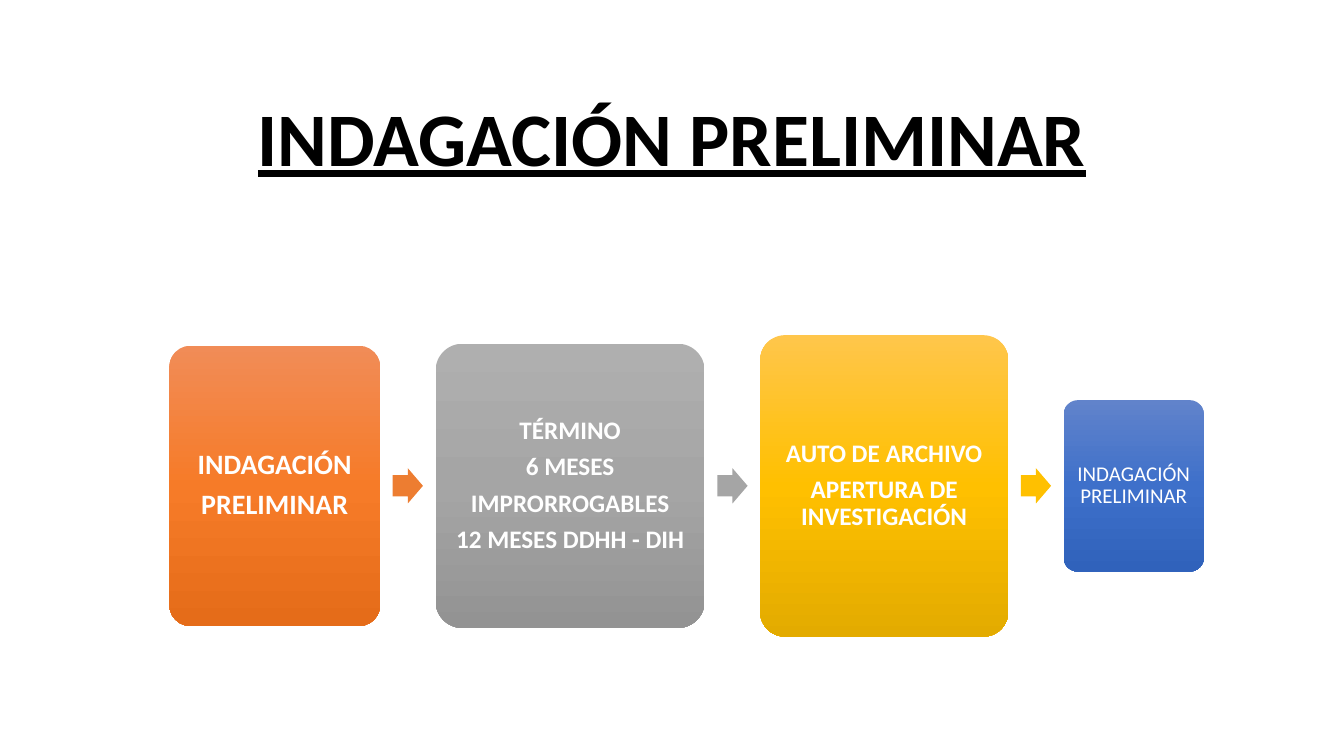
from copy import deepcopy

from pptx import Presentation
from pptx.dml.color import RGBColor
from pptx.enum.shapes import MSO_SHAPE as Shape
from pptx.enum.text import MSO_ANCHOR as Anchor, PP_ALIGN as Align
from pptx.oxml.ns import qn
from pptx.util import Inches, Pt

WIDTH, HEIGHT = 13.33, 7.5
FONT = "Calibri"
BLACK = RGBColor(0x00, 0x00, 0x00)
WHITE = RGBColor(0xFF, 0xFF, 0xFF)
ORANGE = RGBColor(0xED, 0x7D, 0x31)
GRAY = RGBColor(0xA5, 0xA5, 0xA5)
GOLD = RGBColor(0xFF, 0xC0, 0x00)
ORANGE_SHADES = RGBColor(0xF1, 0x8C, 0x57), RGBColor(0xF6, 0x7B, 0x28), RGBColor(0xE5, 0x6C, 0x19)
GRAY_SHADES = RGBColor(0xAF, 0xAF, 0xAF), GRAY, RGBColor(0x93, 0x93, 0x93)
GOLD_SHADES = RGBColor(0xFF, 0xC6, 0x4B), GOLD, RGBColor(0xE3, 0xAB, 0x00)
BLUE_SHADES = RGBColor(0x61, 0x83, 0xCB), RGBColor(0x3E, 0x70, 0xCA), RGBColor(0x30, 0x62, 0xBB)

TITLE = "INDAGACIÓN PRELIMINAR"
# lines, width, height, text size, bold, inset, gradient shades, colour of the arrow that follows
STEPS = [
    (["INDAGACIÓN", "PRELIMINAR"], 2.09, 2.78, 20, True, 0.08, ORANGE_SHADES, ORANGE),
    (["TÉRMINO", "6 MESES", "IMPRORROGABLES", "12 MESES DDHH - DIH"],
     2.67, 2.82, 18, True, 0.07, GRAY_SHADES, GRAY),
    (["AUTO DE ARCHIVO", "APERTURA DE INVESTIGACIÓN"],
     2.46, 2.99, 18, True, 0.07, GOLD_SHADES, GOLD),
    (["INDAGACIÓN PRELIMINAR"], 1.39, 1.7, 15, False, 0.06, BLUE_SHADES, None),
]
FLOW_LEFT, FLOW_MIDDLE = 1.68, 4.82
STEP_GAP = 0.55
ARROW_WIDTH, ARROW_HEIGHT = 0.3, 0.35
SPACE_SHARE = 0.35


def write(frame, lines, size, color, bold=False, underline=False,
          space_after=0, anchor=Anchor.MIDDLE):
    frame.word_wrap = True
    frame.vertical_anchor = anchor
    for index, line in enumerate(lines):
        para = frame.paragraphs[0] if index == 0 else frame.add_paragraph()
        para.alignment = Align.CENTER
        para.line_spacing = 0.9
        para.space_after = Pt(space_after)
        span = para.add_run()
        span.text = line
        font = span.font
        font.name, font.size, font.bold, font.underline = FONT, Pt(size), bold, underline
        font.color.rgb = color


def add_centered(page, kind, left, width, height):
    """Add a borderless shape whose middle lies on the flow's axis."""
    shape = page.shapes.add_shape(kind, Inches(left), Inches(FLOW_MIDDLE - height / 2),
                                  Inches(width), Inches(height))
    shape.shadow.inherit = False
    shape.line.fill.background()
    return shape


def shade(shape, colors):
    """Fill from top to bottom with evenly spaced colours."""
    fill = shape.fill
    fill.gradient()
    fill.gradient_angle = 270
    stop_list = shape._element.spPr.find(qn("a:gradFill")).find(qn("a:gsLst"))
    while len(stop_list) < len(colors):
        stop_list.append(deepcopy(stop_list[-1]))
    for index, (stop, color) in enumerate(zip(fill.gradient_stops, colors)):
        stop.position = index / (len(colors) - 1)
        stop.color.rgb = color


def add_step(page, left, lines, width, height, size, bold, inset, shades):
    box = add_centered(page, Shape.ROUNDED_RECTANGLE, left, width, height)
    box.adjustments[0] = 0.1
    shade(box, shades)
    frame = box.text_frame
    frame.margin_left = frame.margin_right = Inches(inset)
    frame.margin_top = frame.margin_bottom = Inches(inset)
    write(frame, lines, size, WHITE, bold=bold, space_after=size * SPACE_SHARE)


def add_arrow(page, left, color):
    arrow = add_centered(page, Shape.RIGHT_ARROW, left, ARROW_WIDTH, ARROW_HEIGHT)
    arrow.adjustments[0], arrow.adjustments[1] = 0.6, 0.5
    arrow.fill.solid()
    arrow.fill.fore_color.rgb = color


def main():
    deck = Presentation()
    deck.slide_width, deck.slide_height = Inches(WIDTH), Inches(HEIGHT)
    page = deck.slides.add_slide(deck.slide_layouts[6])

    title = page.shapes.add_textbox(Inches(WIDTH / 8), Inches(1.23),
                                    Inches(WIDTH * 3 / 4), Inches(0.63))
    write(title.text_frame, [TITLE], 54, BLACK, bold=True, underline=True, anchor=Anchor.BOTTOM)

    left = FLOW_LEFT
    for lines, width, height, size, bold, inset, shades, arrow_color in STEPS:
        add_step(page, left, lines, width, height, size, bold, inset, shades)
        left += width + STEP_GAP
        if arrow_color is not None:
            add_arrow(page, left - (STEP_GAP + ARROW_WIDTH) / 2, arrow_color)

    deck.save("out.pptx")


if __name__ == "__main__":
    main()
